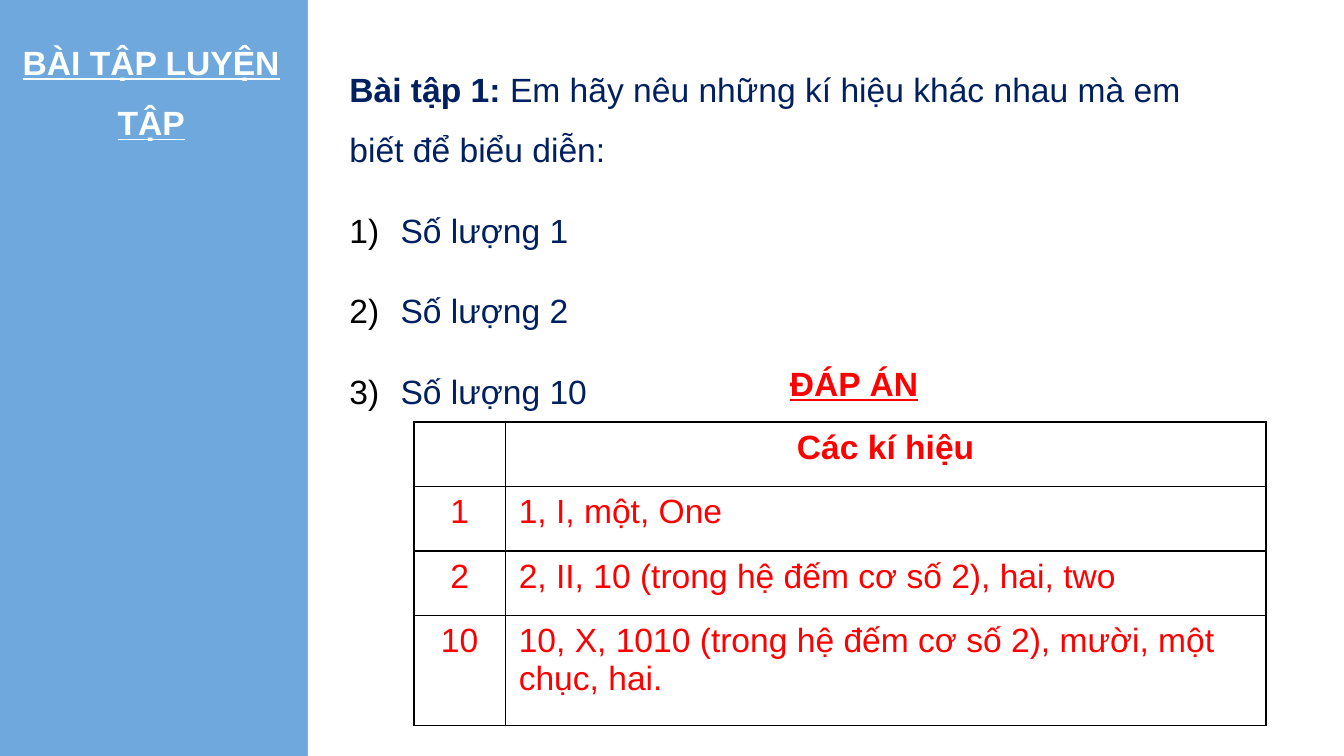
from lxml.etree import SubElement
from pptx import Presentation
from pptx.dml.color import RGBColor
from pptx.enum.shapes import MSO_SHAPE
from pptx.enum.text import MSO_ANCHOR, MSO_AUTO_SIZE, PP_ALIGN
from pptx.oxml.ns import qn
from pptx.util import Inches, Pt

COLORS = {
    "sidebar": "6FA8DC",
    "panel": "FFFFFF",
    "title": "FFFFFF",
    "exercise": "002060",
    "answer": "FF0000",
    "line": "000000",
}
FONT = "Arial"
TEXT_SIZE = 18
SLIDE_W = 10
SLIDE_H = SLIDE_W * 9 / 16

QUANTITIES = ["Số lượng 1", "Số lượng 2", "Số lượng 10"]
ANSWERS = [
    ("", "Các kí hiệu"),
    ("1", "1, I, một, One"),
    ("2", "2, II, 10 (trong hệ đếm cơ số 2), hai, two"),
    ("10", "10, X, 1010 (trong hệ đếm cơ số 2), mười, một chục, hai."),
]


def rgb(name):
    return RGBColor.from_string(COLORS[name])


def place(shape, box):
    shape.left, shape.top, shape.width, shape.height = map(Inches, box)


def style_run(run, color, bold=False, underline=False):
    font = run.font
    font.name, font.size = FONT, Pt(TEXT_SIZE)
    font.bold, font.underline = bold, underline
    font.color.rgb = rgb(color)


def number_paragraph(paragraph, indent):
    """Number a paragraph 1), 2), ... with a hanging indent."""
    props = paragraph._p.get_or_add_pPr()
    props.set("marL", str(Inches(indent)))
    props.set("indent", str(-Inches(indent)))
    bullet_color = SubElement(props, qn("a:buClr"))
    SubElement(bullet_color, qn("a:srgbClr"), val=COLORS["line"])
    SubElement(props, qn("a:buFont"), typeface=FONT)
    SubElement(props, qn("a:buAutoNum"), type="arabicParenR")


def unnumber_paragraph(paragraph):
    props = paragraph._p.get_or_add_pPr()
    props.set("marL", "0")
    props.set("indent", "0")
    SubElement(props, qn("a:buNone"))


def border_cell(cell):
    props = cell._tc.get_or_add_tcPr()
    for side in ("a:lnL", "a:lnR", "a:lnT", "a:lnB"):
        line = SubElement(props, qn(side), w=str(Pt(0.75)))
        fill = SubElement(line, qn("a:solidFill"))
        SubElement(fill, qn("a:srgbClr"), val=COLORS["line"])


def add_panel(slide, box):
    panel = slide.shapes.add_shape(MSO_SHAPE.RECTANGLE, *map(Inches, box))
    panel.shadow.inherit = False
    panel.fill.solid()
    panel.fill.fore_color.rgb = rgb("panel")
    panel.line.fill.background()
    # Send the panel behind the placeholders
    slide.shapes._spTree.insert(2, panel._element)


def fill_title(title, box):
    place(title, box)
    frame = title.text_frame
    frame.text = "BÀI TẬP LUYỆN TẬP"
    frame.word_wrap = True
    frame.auto_size = MSO_AUTO_SIZE.NONE
    frame.vertical_anchor = MSO_ANCHOR.TOP
    frame.margin_top = frame.margin_bottom = Inches(0.1)
    heading = frame.paragraphs[0]
    heading.alignment = PP_ALIGN.CENTER
    heading.line_spacing = 1.5
    style_run(heading.runs[0], "title", bold=True, underline=True)


def fill_exercise(body, box):
    place(body, box)
    frame = body.text_frame
    frame.word_wrap = True
    frame.auto_size = MSO_AUTO_SIZE.NONE
    frame.vertical_anchor = MSO_ANCHOR.TOP

    # Question: bold label, then two lines of text
    frame.text = "Bài tập 1: "
    question = frame.paragraphs[0]
    question.add_run().text = "Em hãy nêu những kí hiệu khác nhau mà em"
    question_end = frame.add_paragraph()
    question_end.text = "biết để biểu diễn:"
    for paragraph in (question, question_end):
        paragraph.line_spacing = 1.5
        paragraph.space_before = Pt(0)
        unnumber_paragraph(paragraph)

    # Numbered quantities
    for quantity in QUANTITIES:
        item = frame.add_paragraph()
        item.text = quantity
        item.line_spacing = 2.0
        item.space_before = Pt(0)
        number_paragraph(item, 0.38)

    for paragraph in frame.paragraphs:
        for run in paragraph.runs:
            style_run(run, "exercise")
    question.runs[0].font.bold = True


def add_answer_table(slide, box, label_width, row_heights):
    table = slide.shapes.add_table(len(ANSWERS), 2, *map(Inches, box)).table
    table.first_row = table.horz_banding = False
    table.columns[0].width = Inches(label_width)
    table.columns[1].width = Inches(box[2] - label_width)
    for r, (answer, height) in enumerate(zip(ANSWERS, row_heights)):
        table.rows[r].height = Inches(height)
        for c, text in enumerate(answer):
            cell = table.cell(r, c)
            border_cell(cell)
            cell.fill.background()
            cell.text = text
            paragraph = cell.text_frame.paragraphs[0]
            is_header = r == 0
            if is_header or c == 0:
                paragraph.alignment = PP_ALIGN.CENTER
            for run in paragraph.runs:
                style_run(run, "answer", bold=is_header)


def add_answer_heading(slide, box):
    frame = slide.shapes.add_textbox(*map(Inches, box)).text_frame
    frame.word_wrap = False
    frame.text = "ĐÁP ÁN"
    style_run(frame.paragraphs[0].runs[0], "answer", bold=True, underline=True)


def main():
    prs = Presentation()
    prs.slide_width, prs.slide_height = Inches(SLIDE_W), Inches(SLIDE_H)
    slide = prs.slides.add_slide(prs.slide_layouts[1])
    slide.background.fill.solid()
    slide.background.fill.fore_color.rgb = rgb("sidebar")

    # White working area to the right of the sidebar
    panel_left = 2.29
    add_panel(slide, (panel_left, 0, SLIDE_W - panel_left, SLIDE_H))

    # Sidebar title and exercise
    fill_title(slide.shapes.title, (0, 0.06, 2.25, 0.94))
    fill_exercise(slide.placeholders[1], (2.5, 0.31, 6.51, 2.83))

    # Answers
    add_answer_table(slide, (3.08, 3.14, 6.34, 2.26), 0.68,
                     [0.48, 0.48, 0.48, 0.82])
    add_answer_heading(slide, (5.78, 2.65, 1.17, 0.4))

    prs.save("out.pptx")


if __name__ == "__main__":
    main()
